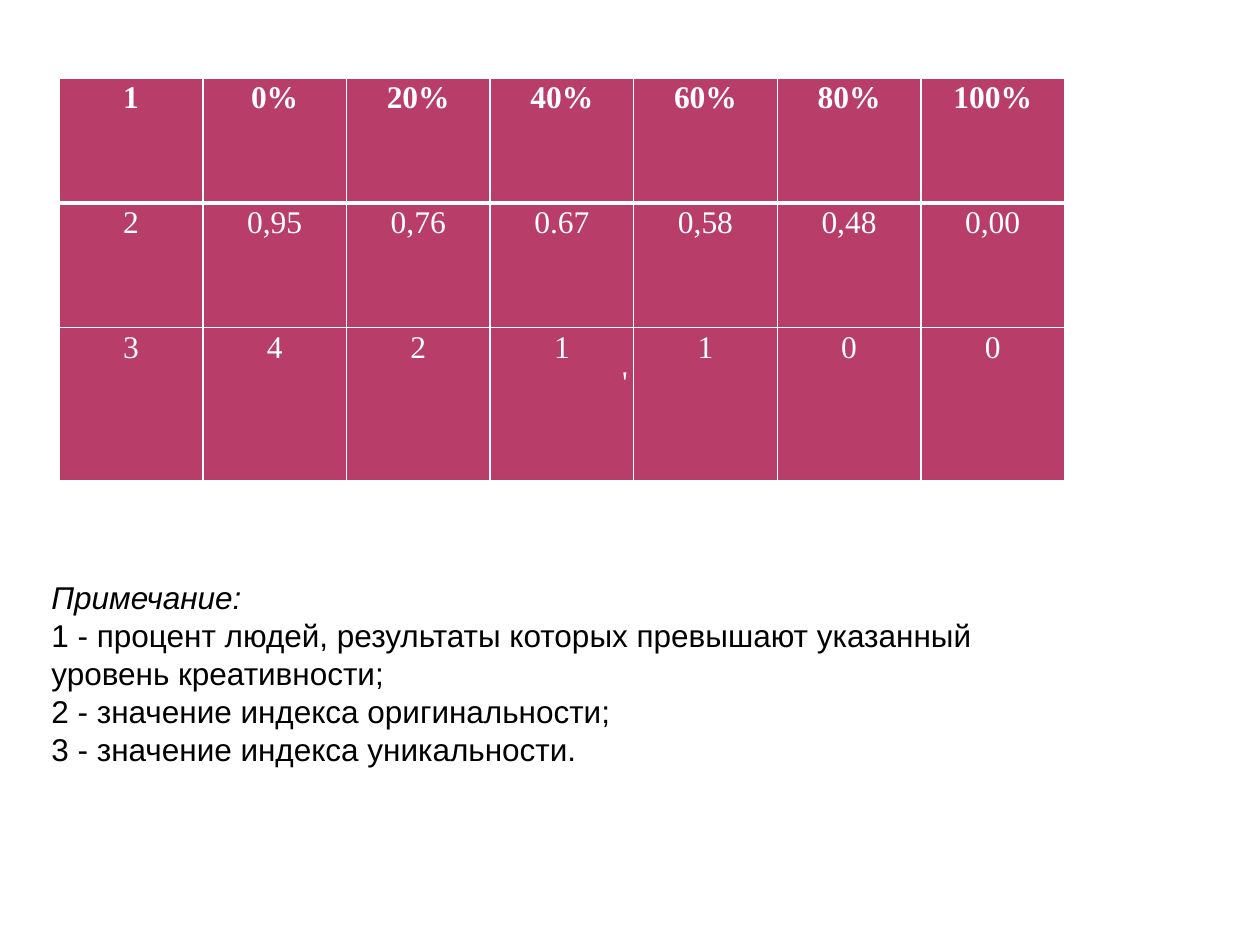
from lxml import etree
from pptx import Presentation
from pptx import util as u
from pptx.dml.color import RGBColor
from pptx.enum import text
from pptx.oxml import ns

theme = {
    "fill": RGBColor.from_string("B83D68"),
    "light": RGBColor.from_string("FFFFFF"),
    "dark": RGBColor.from_string("000000"),
    "size": u.Pt(18),
    "grid": "Times New Roman",
    "note": "Arial",
    "thin": 1,
    "thick": 3,
}


def style(font, **look):
    for key, value in look.items():
        setattr(font, key, value)


def edge(props, side, width):
    line = etree.SubElement(props, ns.qn("a:" + side), w=str(u.Pt(width)))
    solid = etree.SubElement(line, ns.qn("a:solidFill"))
    etree.SubElement(solid, ns.qn("a:srgbClr"), val=str(theme["light"]))


deck = Presentation()
deck.slide_width, deck.slide_height = u.Inches(10), u.Inches(7.5)
wide, high = deck.slide_width, deck.slide_height
slide = deck.slides.add_slide(deck.slide_layouts[6])

rows = [
    ["1", "0%", "20%", "40%", "60%", "80%", "100%"],
    ["2", "0,95", "0,76", "0.67", "0,58", "0,48", "0,00"],
    ["3", "4", "2", "1\n'", "1", "0", "0"],
]
tall = [u.Inches(h) for h in (0.99, 0.99, 1.22)]
step = u.Inches(1.14)
count = len(rows[0])
grid = slide.shapes.add_table(
    len(rows), count, u.Inches(0.47), u.Inches(0.62), step * count, sum(tall)
).table
for col in grid.columns:
    col.width = step

pad = dict.fromkeys(
    ("margin_left", "margin_right", "margin_top", "margin_bottom"), u.Inches(0.02)
)
for r, row in enumerate(rows):
    grid.rows[r].height = tall[r]
    widths = {
        "lnL": theme["thin"],
        "lnR": theme["thin"],
        "lnT": theme["thick"] if r == 1 else theme["thin"],
        "lnB": theme["thick"] if r == 0 else theme["thin"],
    }
    for c, words in enumerate(row):
        cell = grid.cell(r, c)
        for key, value in pad.items():
            setattr(cell, key, value)
        props = cell._tc.get_or_add_tcPr()
        for side, width in widths.items():
            edge(props, side, width)
        cell.fill.solid()
        cell.fill.fore_color.rgb = theme["fill"]
        cell.text = words
        for n, para in enumerate(cell.text_frame.paragraphs):
            para.alignment = text.PP_ALIGN.CENTER
            if n:
                para._p.get_or_add_pPr().set("marL", str(u.Inches(1)))
            for run in para.runs:
                style(run.font, name=theme["grid"], size=theme["size"], bold=r == 0)
                run.font.color.rgb = theme["light"]

notes = [
    "Примечание:",
    "1 - процент людей, результаты которых превышают указанный уровень креативности;",
    "2 - значение индекса оригинальности;",
    "3 - значение индекса уникальности.",
]
box = slide.shapes.add_textbox(
    int(wide * 0.031), int(high * 0.604), int(wide * 0.844), int(high * 0.216)
)
frame = box.text_frame
frame.text = "\n".join(notes)
look = {
    "word_wrap": True,
    "vertical_anchor": text.MSO_ANCHOR.MIDDLE,
    "auto_size": text.MSO_AUTO_SIZE.SHAPE_TO_FIT_TEXT,
}
for key, value in look.items():
    setattr(frame, key, value)
for n, para in enumerate(frame.paragraphs):
    for run in para.runs:
        style(run.font, name=theme["note"], size=theme["size"], italic=n == 0)
        run.font.color.rgb = theme["dark"]

deck.save("out.pptx")
